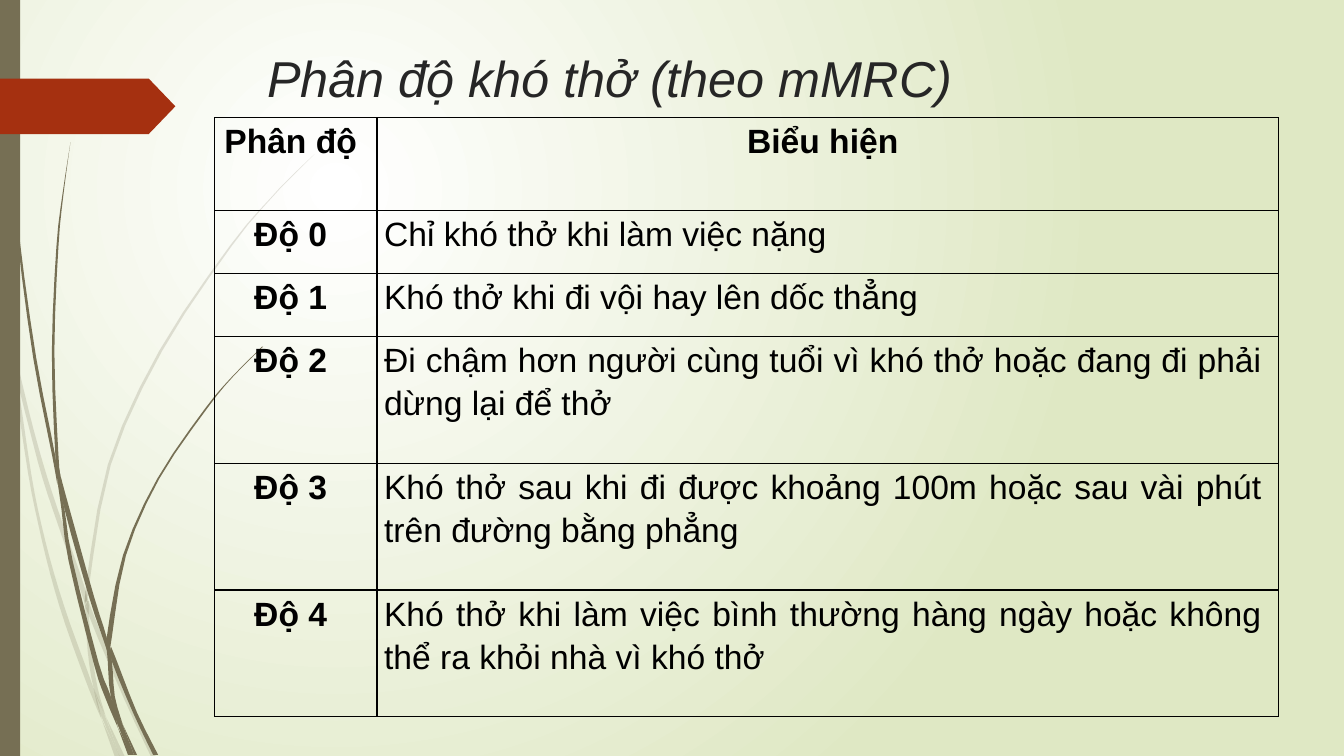
from lxml.etree import SubElement
from pptx import Presentation
from pptx.dml.color import RGBColor
from pptx.enum.shapes import MSO_SHAPE as Preset
from pptx.enum.text import MSO_ANCHOR as Anchor, PP_ALIGN as Align
from pptx.oxml.ns import qn
from pptx.util import Cm, Pt

WHITE = RGBColor(0xFF, 0xFF, 0xFF)
PALE_GREEN = RGBColor(0xDF, 0xE8, 0xC4)
OLIVE = RGBColor(0x76, 0x6F, 0x54)
RUST = RGBColor(0xA5, 0x30, 0x10)
CHARCOAL = RGBColor(0x26, 0x26, 0x26)
BLACK = RGBColor(0, 0, 0)

FADED_BLADES = [
    [(282, 0, 0), (299, 0, 4), (322, 5, 9), (350, 11, 11)],
    [(345, 14, 14), (376, 17, 21), (425, 29, 33), (474, 42, 47),
     (522, 58, 63), (586, 80, 85), (599, 84, 84)],
    [(596, 88, 88), (610, 88, 93), (693, 123, 127), (751, 150, 155)],
    [(711, 105, 105), (751, 119, 124)],
    [(350, 11, 11), (376, 14, 17), (470, 28, 31), (520, 38, 41),
     (570, 50, 54), (620, 65, 70), (683, 88, 93), (714, 101, 101)],
    [(599, 84, 84), (610, 85, 88), (646, 87, 91), (683, 93, 97),
     (711, 105, 105)],
    [(153, 312, 312), (175, 289, 290), (197, 268, 269), (244, 228, 230),
     (348, 158, 161), (461, 107, 110), (584, 85, 88), (596, 88, 88)],
    [(714, 101, 101), (751, 114, 119)],
    [(586, 85, 85), (599, 84, 88), (610, 88, 88)],
    [(683, 93, 93), (707, 99, 103), (751, 119, 119)],
]
SOLID_BLADES = [
    [(0, 3, 4), (48, 4, 5), (110, 7, 8), (233, 17, 19), (355, 33, 36),
     (453, 52, 55), (481, 57, 57)],
    [(472, 60, 60), (505, 64, 69), (591, 88, 93), (633, 102, 106),
     (645, 106, 106)],
    [(641, 110, 110), (656, 111, 116), (707, 132, 136), (749, 152, 157)],
    [(477, 57, 57), (505, 61, 64), (556, 68, 72), (658, 93, 98),
     (691, 104, 110), (722, 117, 117)],
    [(141, 70, 70), (193, 62, 63), (245, 56, 58), (349, 51.5, 54),
     (451, 55, 58), (472, 60, 60)],
    [(719, 122, 122), (749, 133, 136)],
    [(449, 55, 55), (477, 57, 61), (505, 64, 64)],
    [(344, 260, 261), (374, 230, 231), (406, 203, 205), (475, 156, 158),
     (551, 122, 125), (632, 106, 111), (641, 110, 110)],
    [(722, 117, 117), (749, 127, 131)],
    [(645, 106, 106), (656, 107, 111), (691, 110, 114), (719, 122, 122)],
    [(631, 106, 106), (645, 106, 110), (656, 111, 111)],
    [(691, 110, 110), (717, 116, 121), (749, 130, 133)],
]
DEGREES = [
    ("Phân độ", "Biểu hiện"),
    ("Độ 0", "Chỉ khó thở khi làm việc nặng"),
    ("Độ 1", "Khó thở khi đi vội hay lên dốc thẳng"),
    ("Độ 2", "Đi chậm hơn người cùng tuổi vì khó thở hoặc đang đi phải "
             "dừng lại để thở"),
    ("Độ 3", "Khó thở sau khi đi được khoảng 100m hoặc sau vài phút "
             "trên đường bằng phẳng"),
    ("Độ 4", "Khó thở khi làm việc bình thường hàng ngày hoặc không "
             "thể ra khỏi nhà vì khó thở"),
]
COLUMN_SHARES = [1.61, 8.95]
ROW_SHARES = [0.92, 0.63, 0.63, 1.26, 1.26, 1.26]


def apply_format(target, values):
    for name, value in values.items():
        setattr(target, name, value)


def paint(shape, color, opacity=100):
    shape.shadow.inherit = False
    shape.line.fill.background()
    shape.fill.solid()
    shape.fill.fore_color.rgb = color
    if opacity < 100:
        tint = shape._element.spPr.find(".//" + qn("a:srgbClr"))
        SubElement(tint, qn("a:alpha"), val=str(opacity * 1000))


def write(paragraph, text, font, color, layout):
    apply_format(paragraph, layout)
    run = paragraph.add_run()
    run.text = text
    apply_format(run.font, font)
    run.font.color.rgb = color


def smooth(knots, steps=3):
    padded = [knots[0], *knots, knots[-1]]
    curve = []
    for a, b, c, d in zip(padded, padded[1:], padded[2:], padded[3:]):
        for t in (step / steps for step in range(steps)):
            curve.append(tuple(
                q + t / 2 * (r - p + t * (2 * p - 5 * q + 4 * r - s
                                          + t * (3 * (q - r) + s - p)))
                for p, q, r, s in zip(a, b, c, d)))
    return curve + [knots[-1]]


def draw_backdrop(slide):
    fill = slide.background.fill
    fill.gradient()
    for stop, color, position in zip(fill.gradient_stops,
                                     (WHITE, PALE_GREEN), (0, 1)):
        stop.color.rgb = color
        stop.position = position
    gradient = slide._element.find(".//" + qn("a:gradFill"))
    gradient.remove(gradient.find(qn("a:lin")))
    circle = SubElement(gradient, qn("a:path"), path="circle")
    SubElement(circle, qn("a:fillToRect"),
               l="50000", t="50000", r="100000", b="100000")


def draw_grass(slide, left, top, blades, opacity):
    for blade in blades:
        curve = smooth(blade)
        outline = [(x * 100, y * 100) for y, x, _ in curve]
        outline += [(x * 100, y * 100) for y, _, x in reversed(curve)]
        builder = slide.shapes.build_freeform(*outline[0],
                                              scale=Cm(2.54) / 10000)
        builder.add_line_segments(outline[1:], close=True)
        paint(builder.convert_to_shape(left, top), OLIVE, opacity)


def draw_edge(slide, left, top, height):
    bar = slide.shapes.add_shape(Preset.RECTANGLE, left, top, Cm(0.51), height)
    paint(bar, OLIVE)
    marker = slide.shapes.add_shape(Preset.PENTAGON, left, top + Cm(1.98),
                                    Cm(4.42), Cm(1.4))
    marker.adjustments[0] = 0.48
    paint(marker, RUST)


def draw_title(slide, left, top, width, height):
    frame = slide.shapes.add_textbox(left, top, width, height).text_frame
    apply_format(frame, {"word_wrap": True, "vertical_anchor": Anchor.MIDDLE,
                         "margin_bottom": Cm(0.23)})
    write(frame.paragraphs[0], "Phân độ khó thở (theo mMRC)",
          {"name": "Arial", "size": Pt(36), "italic": True}, CHARCOAL,
          {"alignment": Align.LEFT})


def outline_cell(cell):
    properties = cell._tc.get_or_add_tcPr()
    for index, side in enumerate(("lnL", "lnR", "lnT", "lnB")):
        border = properties.makeelement(qn("a:" + side), {"w": str(Pt(1))})
        properties.insert(index, border)
        solid = SubElement(border, qn("a:solidFill"))
        SubElement(solid, qn("a:srgbClr"), val=str(BLACK))


def draw_degrees(slide, left, top, width, height):
    table = slide.shapes.add_table(len(DEGREES), len(COLUMN_SHARES),
                                   left, top, width, height).table
    apply_format(table, {"first_row": False, "horz_banding": False})
    for column, share in zip(table.columns, COLUMN_SHARES):
        column.width = int(width * share / sum(COLUMN_SHARES))
    for row, share in zip(table.rows, ROW_SHARES):
        row.height = int(height * share / sum(ROW_SHARES))
    for r, texts in enumerate(DEGREES):
        for c, text in enumerate(texts):
            heading = r == 0 or c == 0
            cell = table.cell(r, c)
            apply_format(cell, {"margin_left": Cm(0.18),
                                "margin_right": Cm(0.44),
                                "margin_top": 0, "margin_bottom": 0,
                                "vertical_anchor": Anchor.TOP})
            cell.fill.background()
            outline_cell(cell)
            write(cell.text_frame.paragraphs[0], text,
                  {"name": "Arial", "size": Pt(24), "bold": heading}, BLACK,
                  {"alignment": Align.CENTER if heading else Align.JUSTIFY,
                   "line_spacing": 1.15})


def main():
    deck = Presentation()
    apply_format(deck, {"slide_width": Cm(33.87), "slide_height": Cm(19.05)})
    slide = deck.slides.add_slide(deck.slide_layouts[6])
    draw_backdrop(slide)
    draw_grass(slide, 0, 0, FADED_BLADES, 20)
    draw_grass(slide, 0, 0, SOLID_BLADES, 100)
    draw_edge(slide, 0, 0, deck.slide_height)
    draw_title(slide, Cm(6.48), Cm(1.04), Cm(24.77), Cm(1.91))
    draw_degrees(slide, Cm(5.41), Cm(2.97), Cm(26.82), Cm(15.09))
    deck.save("out.pptx")


if __name__ == "__main__":
    main()
